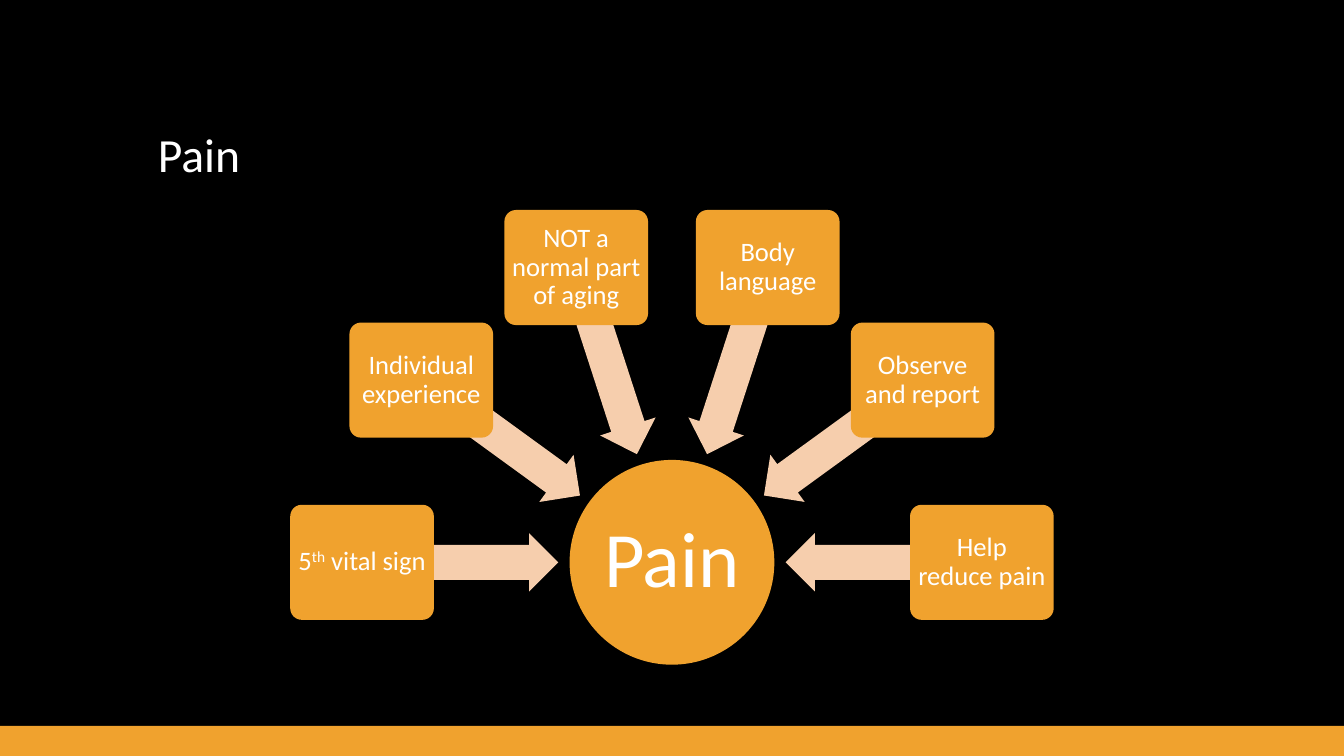
from math import cos, radians, sin

from pptx import Presentation
from pptx.dml.color import RGBColor
from pptx.enum.shapes import MSO_SHAPE
from pptx.enum.text import MSO_ANCHOR, PP_ALIGN
from pptx.util import Cm, Pt

COLOURS = {"background": "000000", "accent": "F0A22E", "arrow": "F6CEAD", "text": "FFFFFF"}
PAGE_WIDTH, PAGE_HEIGHT = 33.87, 19.05
HUB_X, HUB_Y = PAGE_WIDTH / 2, 14.17
HUB_SIZE = 5.16
TOPIC_RADIUS, ARROW_RADIUS = 7.81, 5.34
TOPIC_SIZE = (3.62, 2.9)
ARROW_SIZE = (4.95, 1.47)
FIRST_ANGLE, ANGLE_STEP = 180, 36
TOPICS = [
    [("5", 0), ("th", 30000), (" vital sign", 0)],
    [("Individual experience", 0)],
    [("NOT a normal part of aging", 0)],
    [("Body language", 0)],
    [("Observe and report", 0)],
    [("Help reduce pain", 0)],
]


class SlideBuilder:
    font_name = "Calibri"
    line_spacing = 0.9
    inset = 0.1

    def __init__(self, page):
        self.page = page

    def colour(self, name):
        return RGBColor.from_string(COLOURS[name])

    def background(self, name):
        fill = self.page.background.fill
        fill.solid()
        fill.fore_color.rgb = self.colour(name)

    def shape(self, kind, left, top, width, height, fill, adjustments=(), rotation=0):
        box = self.page.shapes.add_shape(kind, Cm(left), Cm(top), Cm(width), Cm(height))
        box.shadow.inherit = False
        box.fill.solid()
        box.fill.fore_color.rgb = self.colour(fill)
        box.line.fill.background()
        box.rotation = rotation
        for index, value in enumerate(adjustments):
            box.adjustments[index] = value
        return box

    def centred_shape(self, kind, centre, size, fill, adjustments=(), rotation=0):
        left, top = (middle - length / 2 for middle, length in zip(centre, size))
        return self.shape(kind, left, top, *size, fill, adjustments, rotation)

    def add_text(self, box, spans, size, anchor=MSO_ANCHOR.MIDDLE, align=PP_ALIGN.CENTER):
        frame = box.text_frame
        frame_format = {"word_wrap": True, "vertical_anchor": anchor}
        for name, value in frame_format.items():
            setattr(frame, name, value)
        para = frame.paragraphs[0]
        para_format = {"alignment": align, "line_spacing": self.line_spacing}
        for name, value in para_format.items():
            setattr(para, name, value)
        for text, baseline in spans:
            span = para.add_run()
            span.text = text
            span_format = {"name": self.font_name, "size": Pt(size)}
            for name, value in span_format.items():
                setattr(span.font, name, value)
            span.font.color.rgb = self.colour("text")
            if baseline:
                span._r.get_or_add_rPr().set("baseline", str(baseline))

    def label(self, box, spans, size):
        for side in ("left", "top", "right", "bottom"):
            setattr(box.text_frame, f"margin_{side}", Cm(self.inset))
        self.add_text(box, spans, size)

    def title(self, text, left, top, width, height):
        box = self.page.shapes.add_textbox(Cm(left), Cm(top), Cm(width), Cm(height))
        self.add_text(box, [(text, 0)], 34, MSO_ANCHOR.BOTTOM, PP_ALIGN.LEFT)

    def hub(self, text):
        box = self.centred_shape(MSO_SHAPE.OVAL, (HUB_X, HUB_Y), (HUB_SIZE, HUB_SIZE), "accent")
        self.label(box, [(text, 0)], 56)

    def topic(self, spans, angle):
        def around_hub(radius):
            return HUB_X + radius * cos(radians(angle)), HUB_Y + radius * sin(radians(angle))

        self.centred_shape(MSO_SHAPE.LEFT_ARROW, around_hub(ARROW_RADIUS), ARROW_SIZE,
                           "arrow", (0.6, 0.5), angle % 360)
        box = self.centred_shape(MSO_SHAPE.ROUNDED_RECTANGLE, around_hub(TOPIC_RADIUS),
                                 TOPIC_SIZE, "accent", (0.1,))
        self.label(box, spans, 19)


def main():
    deck = Presentation()
    deck.slide_width, deck.slide_height = Cm(PAGE_WIDTH), Cm(PAGE_HEIGHT)
    builder = SlideBuilder(deck.slides.add_slide(deck.slide_layouts[6]))
    builder.background("background")
    builder.shape(MSO_SHAPE.RECTANGLE, 0, 18.29, PAGE_WIDTH, 0.76, "accent")
    builder.title("Pain", 3.73, 1.3, 26.42, 3.43)
    builder.hub("Pain")
    for index, spans in enumerate(TOPICS):
        builder.topic(spans, FIRST_ANGLE + index * ANGLE_STEP)
    deck.save("out.pptx")


if __name__ == "__main__":
    main()
